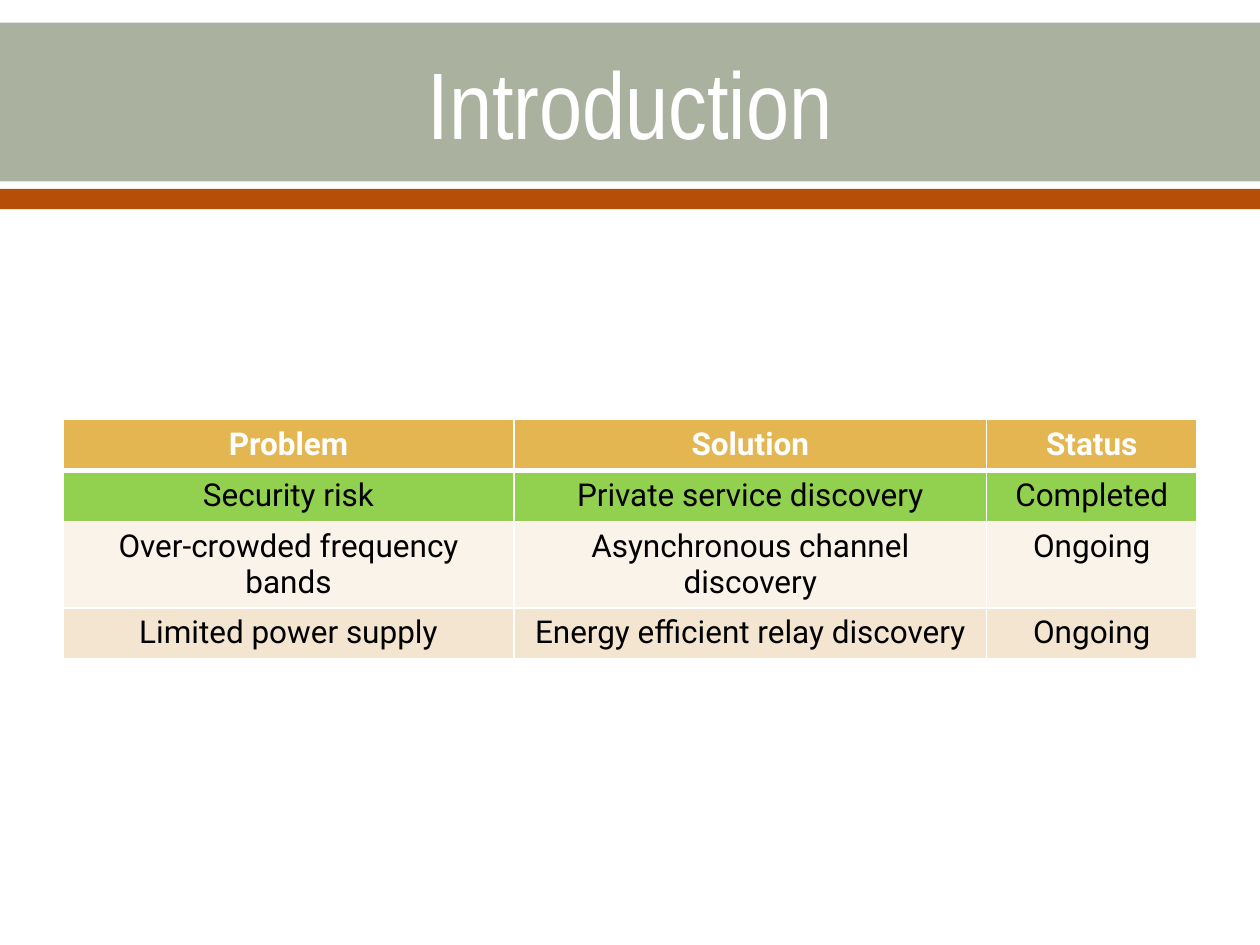
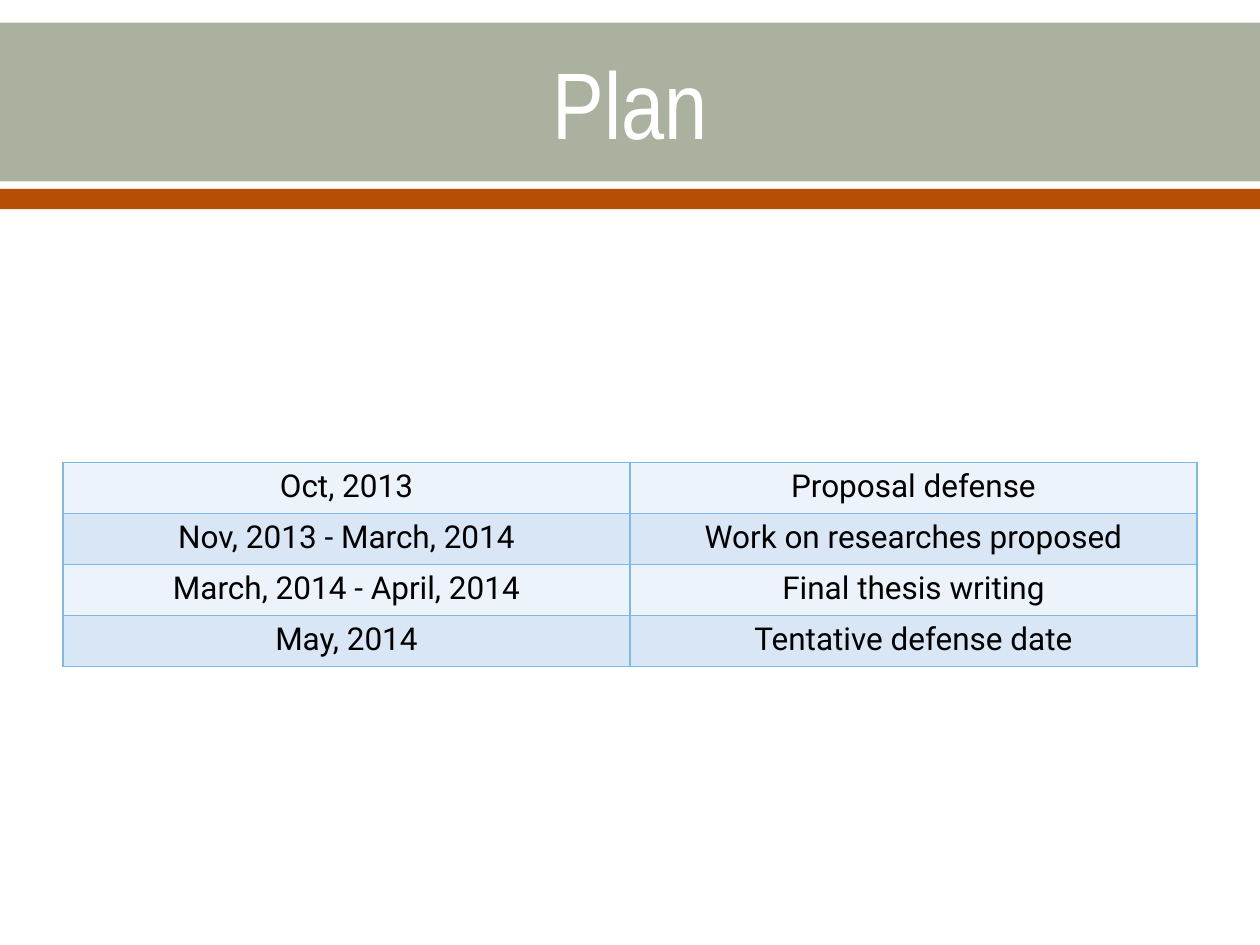
import pptx
import pptx.util
import pptx.dml.color
import pptx.enum.shapes
import pptx.enum.text
import pptx.oxml
import pptx.oxml.ns
from dataclasses import dataclass
from lxml import etree


@dataclass(frozen=True)
class Theme:
    sage: str = "ABB19F"
    rust: str = "B74E08"
    white: str = "FFFFFF"
    black: str = "000000"
    gold: str = "E3B651"
    green: str = "92D050"
    cream: str = "FAF3E9"
    sand: str = "F4E5D0"
    sky: str = "7EB8E7"
    pale: str = "ECF3FA"
    mist: str = "D8E6F6"
    head: str = "Arial Narrow"
    body: str = "Roboto"
    large: int = 54
    small: int = 18


look = Theme()
inch = pptx.util.Inches

bands = [(0.18, 1.26, look.sage), (1.5, 0.16, look.rust)]

pages = [
    {
        "title": "Introduction",
        "top": 3.33,
        "cols": [3.58, 3.75, 1.67],
        "fills": [look.gold, look.green, look.cream, look.sand],
        "edge": look.white,
        "head": True,
        "rows": [
            ("Problem", "Solution", "Status"),
            ("Security risk", "Private service discovery", "Completed"),
            ("Over-crowded frequency bands", "Asynchronous channel discovery", "Ongoing"),
            ("Limited power supply", "Energy efficient relay discovery", "Ongoing"),
        ],
    },
    {
        "title": "Plan",
        "top": 3.67,
        "cols": [4.5, 4.5],
        "fills": [look.pale, look.mist] * 2,
        "edge": look.sky,
        "head": False,
        "rows": [
            ("Oct, 2013", "Proposal defense"),
            ("Nov, 2013 - March, 2014", "Work on researches proposed"),
            ("March, 2014 - April, 2014", "Final thesis writing"),
            ("May, 2014", "Tentative defense date"),
        ],
    },
]


def paint(part, tint):
    part.fill.solid()
    part.fill.fore_color.rgb = pptx.dml.color.RGBColor.from_string(tint)


def style(frame, face, size, tint, bold=False):
    line = frame.paragraphs[0]
    line.alignment = pptx.enum.text.PP_ALIGN.CENTER
    line.font.name = face
    line.font.size = pptx.util.Pt(size)
    line.font.bold = bold
    line.font.color.rgb = pptx.dml.color.RGBColor.from_string(tint)


def border(cell, tint, widths):
    props = cell._tc.get_or_add_tcPr()
    for side, width in widths.items():
        line = etree.SubElement(props, pptx.oxml.ns.qn(f"a:ln{side}"), w=str(pptx.util.Pt(width)))
        fill = etree.SubElement(line, pptx.oxml.ns.qn("a:solidFill"))
        etree.SubElement(fill, pptx.oxml.ns.qn("a:srgbClr"), val=tint)


def add_bands(slide):
    base = slide.slide_layout.placeholders[0].element
    for num, (top, high, tint) in enumerate(bands, 20):
        band = slide.shapes.add_shape(
            pptx.enum.shapes.MSO_SHAPE.RECTANGLE, 0, inch(top), inch(10), inch(high))
        band.shadow.inherit = False
        band.line.fill.background()
        paint(band, tint)
        band.element.nvSpPr.cNvPr.id = num
        base.addprevious(band.element)


def add_title(slide, text):
    title = slide.shapes.title
    title.left, title.top, title.width, title.height = map(inch, (0.5, 0.2, 9, 1.22))
    title.text_frame.text = text
    title.text_frame.vertical_anchor = pptx.enum.text.MSO_ANCHOR.MIDDLE
    style(title.text_frame, look.head, look.large, look.white)


def add_grid(slide, page):
    rows, cols = page["rows"], page["cols"]
    high = 0.405
    grid = slide.shapes.add_table(
        len(rows), len(cols), inch(0.5), inch(page["top"]), inch(9), inch(high * len(rows))).table
    grid.first_row = page["head"]
    grid.horz_banding = False
    for col, wide in zip(grid.columns, cols):
        col.width = inch(wide)
    for r, (row, tint) in enumerate(zip(rows, page["fills"])):
        grid.rows[r].height = inch(high)
        top = page["head"] and r == 0
        below = page["head"] and r == 1
        for c, text in enumerate(row):
            cell = grid.cell(r, c)
            border(cell, page["edge"], {"L": 1, "R": 1, "T": 3 if below else 1, "B": 3 if top else 1})
            paint(cell, tint)
            cell.text = text
            style(cell.text_frame, look.body, look.small, look.white if top else look.black, top)


def main():
    deck = pptx.Presentation()
    deck.slide_width, deck.slide_height = inch(10), inch(7.5)
    for num, page in enumerate(pages):
        slide = deck.slides.add_slide(deck.slide_layouts[5])
        if num == 0:
            add_bands(slide)
        add_title(slide, page["title"])
        add_grid(slide, page)
    deck.save("out.pptx")


if __name__ == "__main__":
    main()
